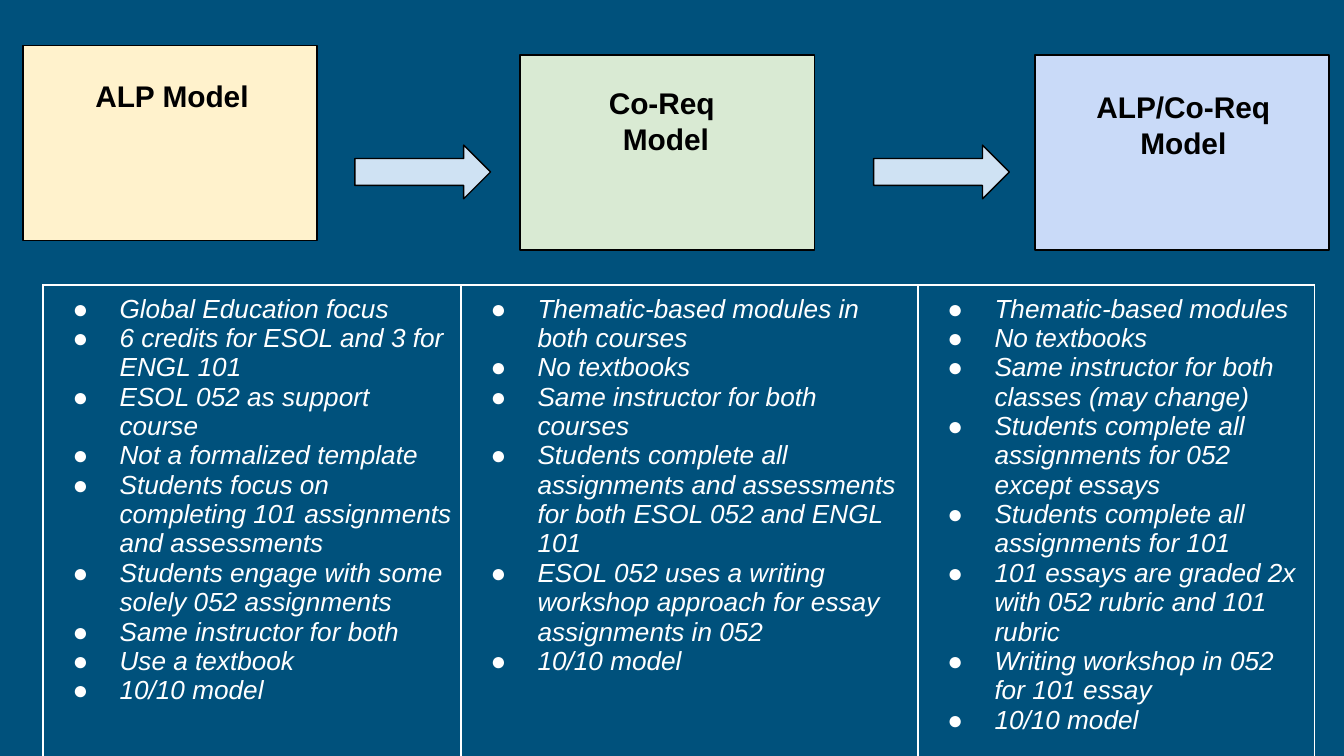
import pptx
import pptx.util
import pptx.dml.color
import pptx.enum.shapes
import pptx.enum.text
import pptx.oxml
import pptx.oxml.ns

SLIDE_WIDTH = 10
SLIDE_HEIGHT = SLIDE_WIDTH * 9 / 16
BOX_WIDTH, BOX_HEIGHT = 2.19, 1.45
ARROW_TOP, ARROW_WIDTH, ARROW_HEIGHT = 1.08, 1.01, 0.4
TABLE_LEFT, TABLE_TOP, TABLE_HEIGHT = 0.32, 2.12, 3.48
CELL_MARGINS = (0.07, 0.07, 0.06, 0.07)
LABEL_MARGINS = (0.1, 0.1, 0.1, 0.1)
NAVY, WHITE, BLACK, PALE_BLUE = "00517C", "FFFFFF", "000000", "CFE2F3"

MODELS = [
    {
        "heading": ["ALP Model"],
        "color": "FFF2CC",
        "box": (0.17, 0.34),
        "label": (0.32, 0.48, 1.92, 1.22),
        "column": 3.11,
        "features": [
            "Global Education focus",
            "6 credits for ESOL and 3 for ENGL 101",
            "ESOL 052 as support course",
            "Not a formalized template",
            "Students focus on completing 101 assignments and assessments",
            "Students engage with some solely 052 assignments",
            "Same instructor for both",
            "Use a textbook",
            "10/10 model",
        ],
    },
    {
        "heading": ["Co-Req ", "Model"],
        "color": "D9EAD3",
        "box": (3.87, 0.41),
        "label": (4.12, 0.53, 1.67, 1.17),
        "column": 3.4,
        "features": [
            "Thematic-based modules in both courses",
            "No textbooks",
            "Same instructor for both courses",
            "Students complete all assignments and assessments for both ESOL 052 and ENGL 101",
            "ESOL 052 uses a writing workshop approach for essay assignments in 052",
            "10/10 model",
        ],
    },
    {
        "heading": ["ALP/Co-Req", "Model"],
        "color": "C9DAF8",
        "box": (7.7, 0.41),
        "label": (7.92, 0.56, 1.77, 1.17),
        "column": 2.95,
        "features": [
            "Thematic-based modules",
            "No textbooks",
            "Same instructor for both classes (may change)",
            "Students complete all assignments for 052 except essays",
            "Students complete all assignments for 101",
            "101 essays are graded 2x with 052 rubric and 101 rubric",
            "Writing workshop in 052 for 101 essay",
            "10/10 model",
        ],
    },
]
ARROW_LEFTS = [2.64, 6.5]


def rgb(color):
    return pptx.dml.color.RGBColor.from_string(color)


def inches(*lengths):
    return [pptx.util.Inches(length) for length in lengths]


def set_margins(holder, margins):
    holder.margin_left, holder.margin_top, holder.margin_right, holder.margin_bottom = inches(*margins)


def add_xml(parent, markup):
    namespace = pptx.oxml.ns.nsdecls("a")
    tag, rest = markup.split(" ", 1)
    parent.append(pptx.oxml.parse_xml(f"<{tag} {namespace} {rest}"))


def write(frame, lines, size, color, bold=False, italic=False, align=None, bullet=None):
    frame.word_wrap = True
    for index, line in enumerate(lines):
        paragraph = frame.add_paragraph() if index else frame.paragraphs[0]
        paragraph.alignment = align
        run = paragraph.add_run()
        run.text = line
        font = run.font
        font.name, font.size = "Arial", pptx.util.Pt(size)
        font.bold, font.italic = bold, italic
        font.color.rgb = rgb(color)
        if bullet:
            properties = paragraph._p.get_or_add_pPr()
            properties.set("marL", str(pptx.util.Inches(0.5)))
            properties.set("indent", str(pptx.util.Inches(-0.35)))
            add_xml(properties, f'a:buClr ><a:srgbClr val="{color}"/></a:buClr>')
            add_xml(properties, 'a:buFont typeface="Arial"/>')
            add_xml(properties, f'a:buChar char="{bullet}"/>')


def add_outlined(slide, kind, bounds, color):
    shape = slide.shapes.add_shape(kind, *inches(*bounds))
    shape.shadow.inherit = False
    shape.fill.solid()
    shape.fill.fore_color.rgb = rgb(color)
    shape.line.color.rgb = rgb(BLACK)
    shape.line.width = pptx.util.Pt(0.75)


def add_heading(slide, model):
    rectangle = pptx.enum.shapes.MSO_SHAPE.RECTANGLE
    add_outlined(slide, rectangle, (*model["box"], BOX_WIDTH, BOX_HEIGHT), model["color"])
    frame = slide.shapes.add_textbox(*inches(*model["label"])).text_frame
    set_margins(frame, LABEL_MARGINS)
    write(frame, model["heading"], 16, BLACK, bold=True, align=pptx.enum.text.PP_ALIGN.CENTER)


def add_features(slide):
    width = sum(model["column"] for model in MODELS)
    bounds = inches(TABLE_LEFT, TABLE_TOP, width, TABLE_HEIGHT)
    table = slide.shapes.add_table(1, len(MODELS), *bounds).table
    table.first_row = table.horz_banding = False
    for index, model in enumerate(MODELS):
        table.columns[index].width = pptx.util.Inches(model["column"])
        cell = table.cell(0, index)
        set_margins(cell, CELL_MARGINS)
        write(cell.text_frame, model["features"], 14, WHITE, italic=True, bullet="●")
        for edge in ("lnL", "lnR", "lnT", "lnB"):
            add_xml(
                cell._tc.get_or_add_tcPr(),
                f'a:{edge} w="{pptx.util.Pt(1)}"><a:solidFill><a:srgbClr val="{WHITE}"/>'
                f"</a:solidFill></a:{edge}>",
            )
        cell.fill.background()


def main():
    deck = pptx.Presentation()
    deck.slide_width, deck.slide_height = inches(SLIDE_WIDTH, SLIDE_HEIGHT)
    slide = deck.slides.add_slide(deck.slide_layouts[6])
    slide.background.fill.solid()
    slide.background.fill.fore_color.rgb = rgb(NAVY)
    for model in MODELS:
        add_heading(slide, model)
    for left in ARROW_LEFTS:
        arrow = pptx.enum.shapes.MSO_SHAPE.RIGHT_ARROW
        add_outlined(slide, arrow, (left, ARROW_TOP, ARROW_WIDTH, ARROW_HEIGHT), PALE_BLUE)
    add_features(slide)
    deck.save("out.pptx")


if __name__ == "__main__":
    main()
